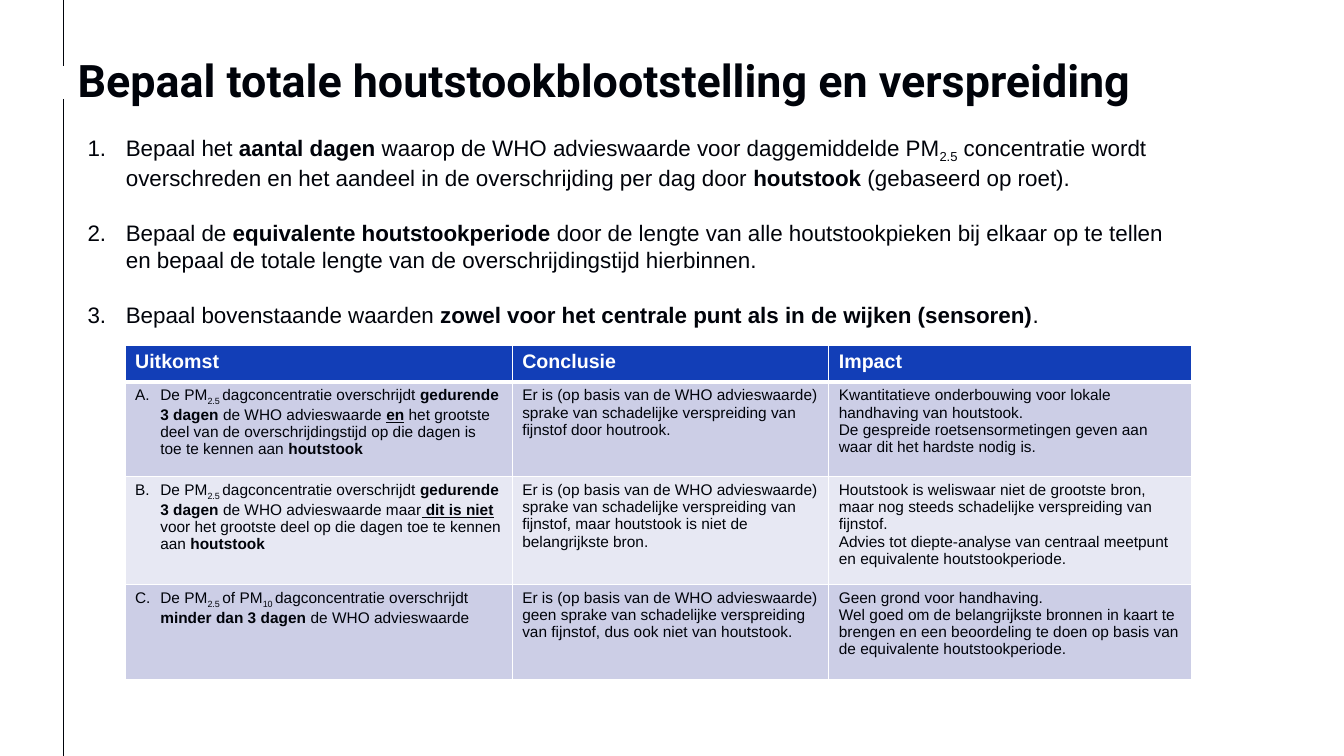
from pptx import Presentation
from pptx.dml.color import RGBColor
from pptx.enum.shapes import MSO_CONNECTOR as Connector
from pptx.enum.text import MSO_ANCHOR as Anchor
from pptx.oxml.ns import qn
from pptx.util import Inches, Pt
from lxml.etree import SubElement

COLORS = {
    "ink": "00030A",
    "white": "FFFFFF",
    "header": "123EB7",
    "odd_row": "CCCEE6",
    "even_row": "E7E8F3",
}

# Runs are (text, style): b = bold, u = underlined, s = subscript
STEPS = [
    [("Bepaal het ", ""), ("aantal dagen ", "b"),
     ("waarop de WHO advieswaarde voor daggemiddelde PM", ""), ("2.5", "s"),
     (" concentratie wordt overschreden en het aandeel in de overschrijding per dag door ", ""),
     ("houtstook ", "b"), ("(gebaseerd op roet).", "")],
    [("Bepaal de ", ""), ("equivalente houtstookperiode ", "b"),
     ("door de lengte van alle houtstookpieken bij elkaar op te tellen en bepaal "
      "de totale lengte van de overschrijdingstijd hierbinnen.", "")],
    [("Bepaal bovenstaande waarden ", ""),
     ("zowel voor het centrale punt als in de wijken (sensoren)", "b"), (".", "")],
]

HEADERS = ["Uitkomst", "Conclusie", "Impact"]
COLUMN_WIDTHS = [3.84, 3.14, 3.6]
ROW_HEIGHTS = [0.36, 0.94, 1.07, 0.94]

# Each outcome: runs of the lettered result, conclusion, impact paragraphs
OUTCOMES = [
    ([("De PM", ""), ("2.5 ", "s"), ("dagconcentratie overschrijdt ", ""),
      ("gedurende 3 dagen ", "b"), ("de WHO advieswaarde ", ""), ("en", "bu"),
      (" het grootste deel van de overschrijdingstijd op die dagen is toe te kennen aan ", ""),
      ("houtstook", "b")],
     "Er is (op basis van de WHO advieswaarde) sprake van schadelijke verspreiding "
     "van fijnstof door houtrook.",
     ["Kwantitatieve onderbouwing voor lokale handhaving van houtstook.",
      "De gespreide roetsensormetingen geven aan waar dit het hardste nodig is."]),
    ([("De PM", ""), ("2.5 ", "s"), ("dagconcentratie overschrijdt ", ""),
      ("gedurende 3 dagen ", "b"), ("de WHO advieswaarde maar", ""), (" dit is niet ", "bu"),
      ("voor het grootste deel op die dagen toe te kennen aan ", ""), ("houtstook", "b")],
     "Er is (op basis van de WHO advieswaarde) sprake van schadelijke verspreiding "
     "van fijnstof, maar houtstook is niet de belangrijkste bron.",
     ["Houtstook is weliswaar niet de grootste bron, maar nog steeds schadelijke "
      "verspreiding van fijnstof.",
      "Advies tot diepte-analyse van centraal meetpunt en equivalente houtstookperiode."]),
    ([("De PM", ""), ("2.5 ", "s"), ("of PM", ""), ("10 ", "s"),
      ("dagconcentratie overschrijdt ", ""), ("minder dan 3 dagen", "b"),
      (" de WHO advieswaarde", "")],
     "Er is (op basis van de WHO advieswaarde) geen sprake van schadelijke verspreiding "
     "van fijnstof, dus ook niet van houtstook.",
     ["Geen grond voor handhaving.",
      "Wel goed om de belangrijkste bronnen in kaart te brengen en een beoordeling te "
      "doen op basis van de equivalente houtstookperiode."]),
]


def rgb(name):
    return RGBColor.from_string(COLORS[name])


def style_paragraph(paragraph, size, color="ink", bold=False, name="Arial"):
    font = paragraph.font
    font.size, font.bold, font.name = Pt(size), bold, name
    font.color.rgb = rgb(color)


def number_paragraph(paragraph, scheme, indent, start=1):
    properties = paragraph._p.get_or_add_pPr()
    properties.set("marL", str(Inches(indent)))
    properties.set("indent", str(-Inches(indent)))
    bullet = SubElement(properties, qn("a:buAutoNum"), type=scheme)
    if start > 1:
        bullet.set("startAt", str(start))


def add_runs(paragraph, runs):
    for text, style in runs:
        run = paragraph.add_run()
        run.text = text
        if "b" in style:
            run.font.bold = True
        if "u" in style:
            run.font.underline = True
        if "s" in style:
            run._r.get_or_add_rPr().set("baseline", "-25000")


def add_text_box(slide, left, top, width, height):
    box = slide.shapes.add_textbox(Inches(left), Inches(top), Inches(width), Inches(height))
    frame = box.text_frame
    frame.word_wrap = True
    frame.vertical_anchor = Anchor.TOP
    return frame


def add_margin_line(slide, x, top, bottom):
    line = slide.shapes.add_connector(
        Connector.STRAIGHT, Inches(x), Inches(top), Inches(x), Inches(bottom))
    line.line.color.rgb = rgb("ink")
    line.line.width = Pt(0.57)
    SubElement(line._element.spPr, qn("a:effectLst"))


def add_title(slide, left, top, width, height):
    frame = add_text_box(slide, left, top, width, height)
    frame.margin_left = frame.margin_top = frame.margin_right = frame.margin_bottom = 0
    paragraph = frame.paragraphs[0]
    paragraph.text = "Bepaal totale houtstookblootstelling en verspreiding"
    paragraph.line_spacing = 0.9
    style_paragraph(paragraph, 32, bold=True, name="Roboto")


def add_steps(slide, left, top, width, height):
    frame = add_text_box(slide, left, top, width, height)
    for index, runs in enumerate(STEPS):
        paragraph = frame.add_paragraph() if index else frame.paragraphs[0]
        number_paragraph(paragraph, "arabicPeriod", 0.38)
        if index:
            paragraph.space_before = Pt(20)
        style_paragraph(paragraph, 16)
        add_runs(paragraph, runs)


def style_cell(cell, fill, bottom_width=1):
    properties = cell._tc.get_or_add_tcPr()
    for side in ("L", "R", "T", "B"):
        width = bottom_width if side == "B" else 1
        border = SubElement(properties, qn(f"a:ln{side}"), w=str(Pt(width)))
        solid = SubElement(border, qn("a:solidFill"))
        SubElement(solid, qn("a:srgbClr"), val=COLORS["white"])
    cell.fill.solid()
    cell.fill.fore_color.rgb = rgb(fill)


def fill_cell(cell, paragraphs, size, color="ink", bold=False):
    frame = cell.text_frame
    for index, text in enumerate(paragraphs):
        paragraph = frame.add_paragraph() if index else frame.paragraphs[0]
        paragraph.text = text
        style_paragraph(paragraph, size, color, bold)


def add_outcome_table(slide, left, top):
    table = slide.shapes.add_table(
        len(ROW_HEIGHTS), len(COLUMN_WIDTHS), Inches(left), Inches(top),
        Inches(sum(COLUMN_WIDTHS)), Inches(sum(ROW_HEIGHTS))).table
    for column, width in zip(table.columns, COLUMN_WIDTHS):
        column.width = Inches(width)
    for row, height in zip(table.rows, ROW_HEIGHTS):
        row.height = Inches(height)

    # Header row
    for cell, header in zip(table.rows[0].cells, HEADERS):
        style_cell(cell, "header", bottom_width=3)
        fill_cell(cell, [header], 14, "white", bold=True)

    # Lettered outcomes
    for number, (result, conclusion, impact) in enumerate(OUTCOMES, start=1):
        cells = list(table.rows[number].cells)
        for cell in cells:
            style_cell(cell, "odd_row" if number % 2 else "even_row")
        paragraph = cells[0].text_frame.paragraphs[0]
        number_paragraph(paragraph, "alphaUcPeriod", 0.25, number)
        style_paragraph(paragraph, 11)
        add_runs(paragraph, result)
        fill_cell(cells[1], [conclusion], 11)
        fill_cell(cells[2], impact, 11)


def main():
    presentation = Presentation()
    presentation.slide_width, presentation.slide_height = Inches(13.33), Inches(7.5)
    slide = presentation.slides.add_slide(presentation.slide_layouts[6])
    add_margin_line(slide, 0.63, 0.98, 7.5)
    add_margin_line(slide, 0.63, 0, 0.65)
    add_title(slide, 0.77, 0.58, 12.28, 0.4)
    add_steps(slide, 0.77, 1.28, 11.04, 2.52)
    add_outcome_table(slide, 1.24, 3.43)
    presentation.save("out.pptx")


if __name__ == "__main__":
    main()
